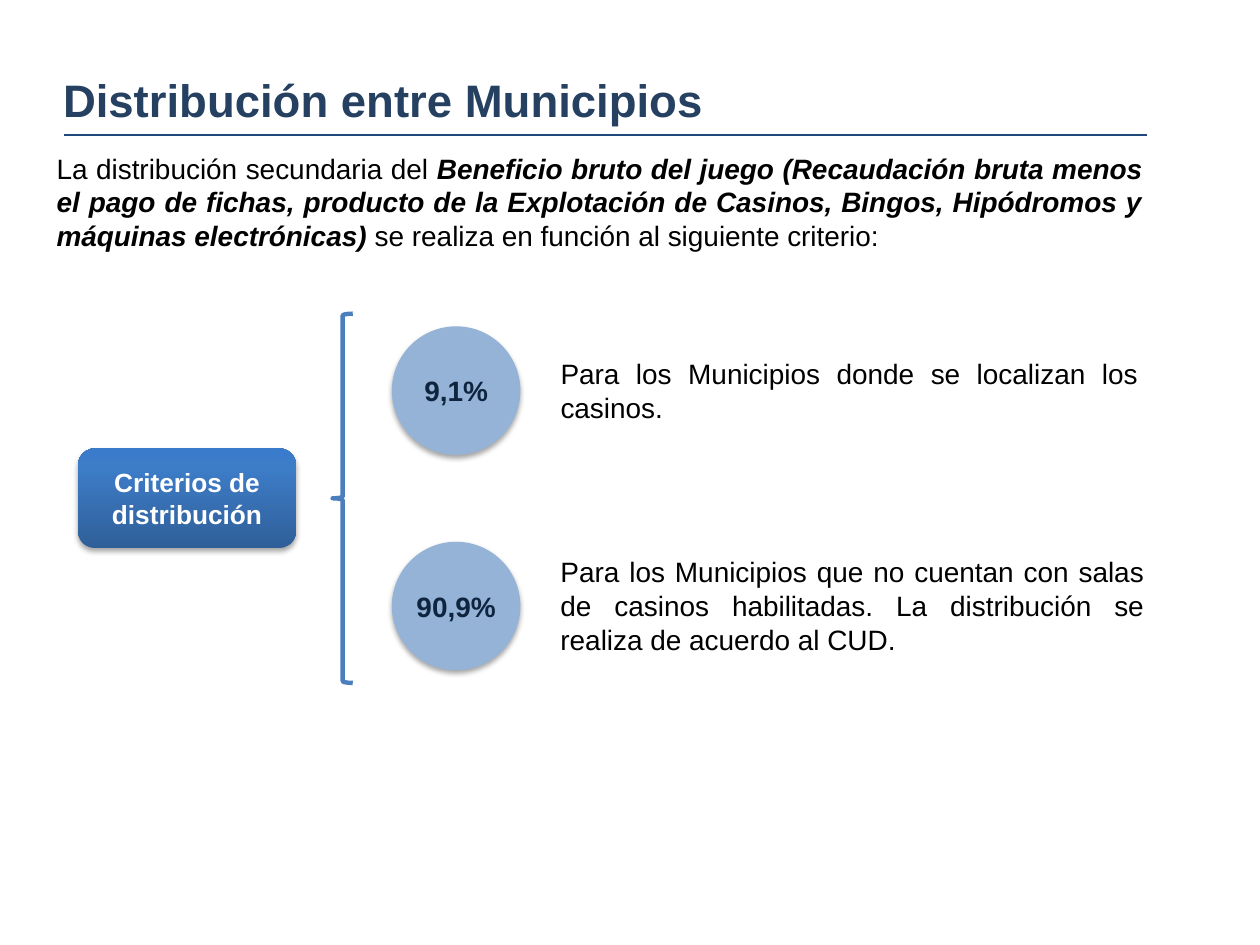
from lxml.etree import SubElement
from pptx import Presentation
from pptx.dml.color import RGBColor
from pptx.enum.shapes import MSO_CONNECTOR, MSO_SHAPE
from pptx.enum.text import MSO_ANCHOR, PP_ALIGN
from pptx.oxml import parse_xml
from pptx.oxml.ns import nsdecls, qn
from pptx.util import Inches, Pt

TITLE = "Distribución entre Municipios"
INTRO = [
    ("La distribución secundaria del ", False),
    ("Beneficio bruto del juego (Recaudación bruta menos el pago de fichas, producto de la "
     "Explotación de Casinos, Bingos, Hipódromos y máquinas electrónicas) ", True),
    ("se realiza en función al siguiente criterio:", False),
]
ROOT = "Criterios de distribución"
CRITERIA = [
    ("9,1%", "Para los Municipios donde se localizan los casinos.", 47.8, 8.53),
    ("90,9%", "Para los Municipios que no cuentan con salas de casinos habilitadas. "
     "La distribución se realiza de acuerdo al CUD.", 48.3, 12.13),
]
GRADIENT = [(0, "2F5F99"), (80, "3D7CC7"), (100, "3A7CCB")]
FIRST_ROW, ROW_PITCH = 41.33, 22.8
MIDDLE = FIRST_ROW + ROW_PITCH * (len(CRITERIA) - 1) / 2

prs = Presentation()
prs.slide_width, prs.slide_height = Inches(10), Inches(7.5)
slide = prs.slides.add_slide(prs.slide_layouts[5])


def color(value):
    return RGBColor.from_string(value)


def across(share):
    return round(prs.slide_width * share / 100)


def down(share):
    return round(prs.slide_height * share / 100)


def centred(left, middle, width, height):
    return across(left), down(middle - height / 2), across(width), down(height)


def style(run, size, ink, bold=False, italic=False):
    font = run.font
    font.name, font.size, font.bold, font.italic = "Arial", Pt(size), bold, italic
    font.color.rgb = color(ink)


def add_paragraph_box(area, pieces):
    frame = slide.shapes.add_textbox(*area).text_frame
    frame.word_wrap = True
    paragraph = frame.paragraphs[0]
    paragraph.alignment = PP_ALIGN.JUSTIFY
    for words, strong in pieces:
        run = paragraph.add_run()
        run.text = words
        style(run, 16, "000000", strong, strong)


def add_label_shape(kind, area, words, size, ink, inset):
    shape = slide.shapes.add_shape(kind, *area)
    shape.line.fill.background()
    frame = shape.text_frame
    frame.word_wrap = True
    frame.vertical_anchor = MSO_ANCHOR.MIDDLE
    frame.margin_left = frame.margin_right = Inches(inset)
    frame.margin_top = frame.margin_bottom = Inches(inset / 2)
    frame.text = words
    frame.paragraphs[0].alignment = PP_ALIGN.CENTER
    style(frame.paragraphs[0].runs[0], size, ink, True)
    shape.shadow.inherit = False
    effects = shape._element.spPr.find(qn("a:effectLst"))
    outer = SubElement(effects, qn("a:outerShdw"), blurRad=str(Pt(3.1)), dist=str(Pt(1.8)),
                       dir="5400000", rotWithShape="0")
    black = SubElement(outer, qn("a:srgbClr"), val="000000")
    SubElement(black, qn("a:alpha"), val="35000")
    return shape


def fill_gradient(shape, stops):
    marks = "".join(f'<a:gs pos="{place * 1000}"><a:srgbClr val="{tone}"/></a:gs>'
                    for place, tone in stops)
    gradient = parse_xml(f'<a:gradFill {nsdecls("a")} rotWithShape="1"><a:gsLst>{marks}</a:gsLst>'
                         '<a:lin ang="16200000" scaled="0"/></a:gradFill>')
    shape._element.spPr.find(qn("a:prstGeom")).addnext(gradient)


rule = slide.shapes.add_connector(MSO_CONNECTOR.STRAIGHT, across(5.1), down(14.27),
                                  across(91), down(14.27))
rule.line.color.rgb, rule.line.width = color("1F497D"), Pt(1.5)
SubElement(rule._element.spPr, qn("a:effectLst"))

title = slide.shapes.title
title.left, title.top, title.width, title.height = across(4), down(6.93), across(88.2), down(7.2)
title.text_frame.text = TITLE
title.text_frame.vertical_anchor = MSO_ANCHOR.TOP
title.text_frame.paragraphs[0].alignment = PP_ALIGN.LEFT
style(title.text_frame.paragraphs[0].runs[0], 26, "254061", True)

add_paragraph_box((across(3.5), down(15.33), across(88.2), down(12.13)), INTRO)

root = add_label_shape(MSO_SHAPE.ROUNDED_RECTANGLE, centred(6.2, MIDDLE, 17.3, 10.53),
                       ROOT, 15, "FFFFFF", 0.1)
fill_gradient(root, GRADIENT)

brace = slide.shapes.add_shape(MSO_SHAPE.LEFT_BRACE, *centred(26.4, MIDDLE, 1.6, 39.07))
brace.shadow.inherit = False
brace.fill.background()
brace.line.color.rgb, brace.line.width = color("4B7EBC"), Pt(2.5)

for row, (share, rule_text, width, height) in enumerate(CRITERIA):
    middle = FIRST_ROW + row * ROW_PITCH
    circle = add_label_shape(MSO_SHAPE.OVAL, centred(31.1, middle, 10.2, 13.6),
                             share, 16, "0F243E", 0)
    circle.fill.solid()
    circle.fill.fore_color.rgb = color("95B3D7")
    add_paragraph_box(centred(43.5, middle, width, height), [(rule_text, False)])

prs.save("out.pptx")
